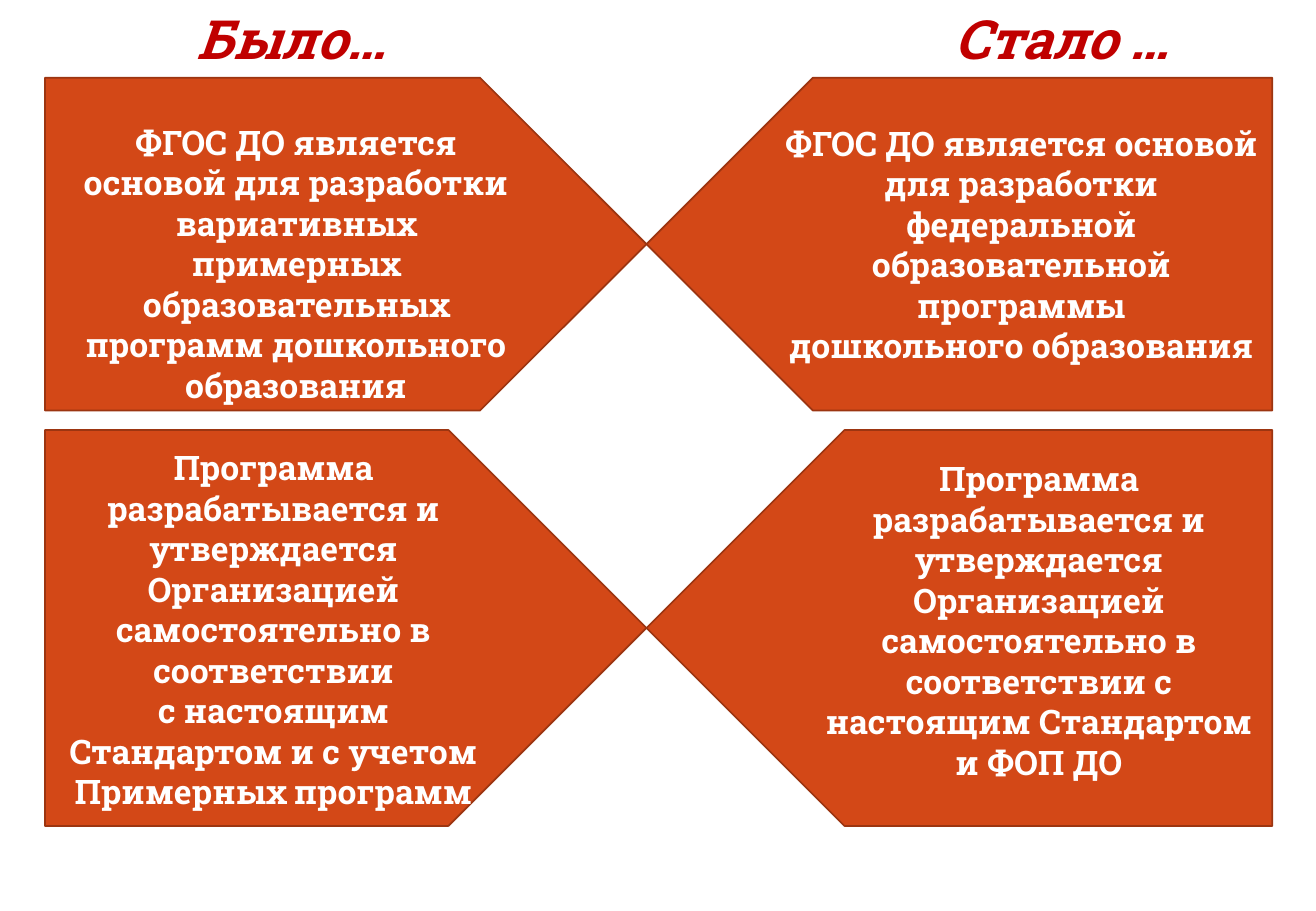
from typing import NamedTuple

from pptx import Presentation
from pptx.dml.color import RGBColor
from pptx.enum.shapes import MSO_SHAPE as Shape
from pptx.enum.text import MSO_AUTO_SIZE as AutoSize, PP_ALIGN as Align
from pptx.slide import Slide
from pptx.util import Inches, Pt

FONT = "Roboto Slab"
RED = RGBColor(0xC0, 0x00, 0x00)
ORANGE = RGBColor(0xD3, 0x48, 0x17)
BROWN = RGBColor(0x9C, 0x35, 0x11)
WHITE = RGBColor(0xFF, 0xFF, 0xFF)

LEFT, MIDDLE, RIGHT = 0.37, 5.32, 10.47
HEADING_WIDTH, HEADING_HEIGHT = 3.47, 0.64


class Area(NamedTuple):
    left: float
    top: float
    width: float
    height: float


class Heading(NamedTuple):
    text: str
    left: float


class Row(NamedTuple):
    top: float
    height: float


class Statement(NamedTuple):
    area: Area
    lines: list[str]


HEADINGS = [Heading("Было…", 0.66), Heading("Стало …", 7)]
ROWS = [Row(0.64, 2.74), Row(3.54, 3.26)]
STATEMENTS = [
    Statement(Area(0.49, 0.95, 3.89, 2.12), [
        "ФГОС ДО является основой для разработки",
        "вариативных примерных образовательных",
        "программ дошкольного образования",
    ]),
    Statement(Area(6.34, 0.96, 4.13, 2.12), [
        "ФГОС ДО является основой для разработки",
        "федеральной образовательной программы",
        "дошкольного образования",
    ]),
    Statement(Area(0.37, 3.63, 3.76, 3.13), [
        "Программа разрабатывается и утверждается",
        "Организацией самостоятельно в соответствии",
        "с настоящим Стандартом и с учетом",
        "Примерных программ",
    ]),
    Statement(Area(6.63, 3.72, 3.84, 2.79), [
        "Программа разрабатывается и утверждается",
        "Организацией самостоятельно в соответствии с",
        "настоящим Стандартом и ФОП ДО",
    ]),
]


def add_text(page: Slide, area: Area, lines: list[str], *, size: float,
             color: RGBColor, italic: bool = False) -> None:
    box = page.shapes.add_textbox(*map(Inches, area))
    frame = box.text_frame
    frame.word_wrap = True
    frame.auto_size = AutoSize.SHAPE_TO_FIT_TEXT
    frame.text = "\n".join(lines)
    for para in frame.paragraphs:
        para.alignment = Align.CENTER
        for span in para.runs:
            font = span.font
            font.name, font.size, font.bold = FONT, Pt(size), True
            font.italic = italic
            font.color.rgb = color


def add_arrow(page: Slide, area: Area, *, rotation: float) -> None:
    arrow = page.shapes.add_shape(Shape.PENTAGON, *map(Inches, area))
    arrow.rotation = rotation
    arrow.shadow.inherit = False
    arrow.fill.solid()
    arrow.fill.fore_color.rgb = ORANGE
    arrow.line.color.rgb = BROWN
    arrow.line.width = Pt(1)


def main() -> None:
    deck = Presentation()
    deck.slide_width, deck.slide_height = Inches(10.83), Inches(7.5)
    page = deck.slides.add_slide(deck.slide_layouts.get_by_name("Blank"))

    for heading in HEADINGS:
        area = Area(heading.left, 0, HEADING_WIDTH, HEADING_HEIGHT)
        add_text(page, area, [heading.text], size=32, color=RED, italic=True)
    for row in ROWS:
        add_arrow(page, Area(LEFT, row.top, MIDDLE - LEFT, row.height), rotation=0)
        add_arrow(page, Area(MIDDLE, row.top, RIGHT - MIDDLE, row.height), rotation=180)
    for statement in STATEMENTS:
        add_text(page, statement.area, statement.lines, size=20, color=WHITE)

    deck.save("out.pptx")


if __name__ == "__main__":
    main()
